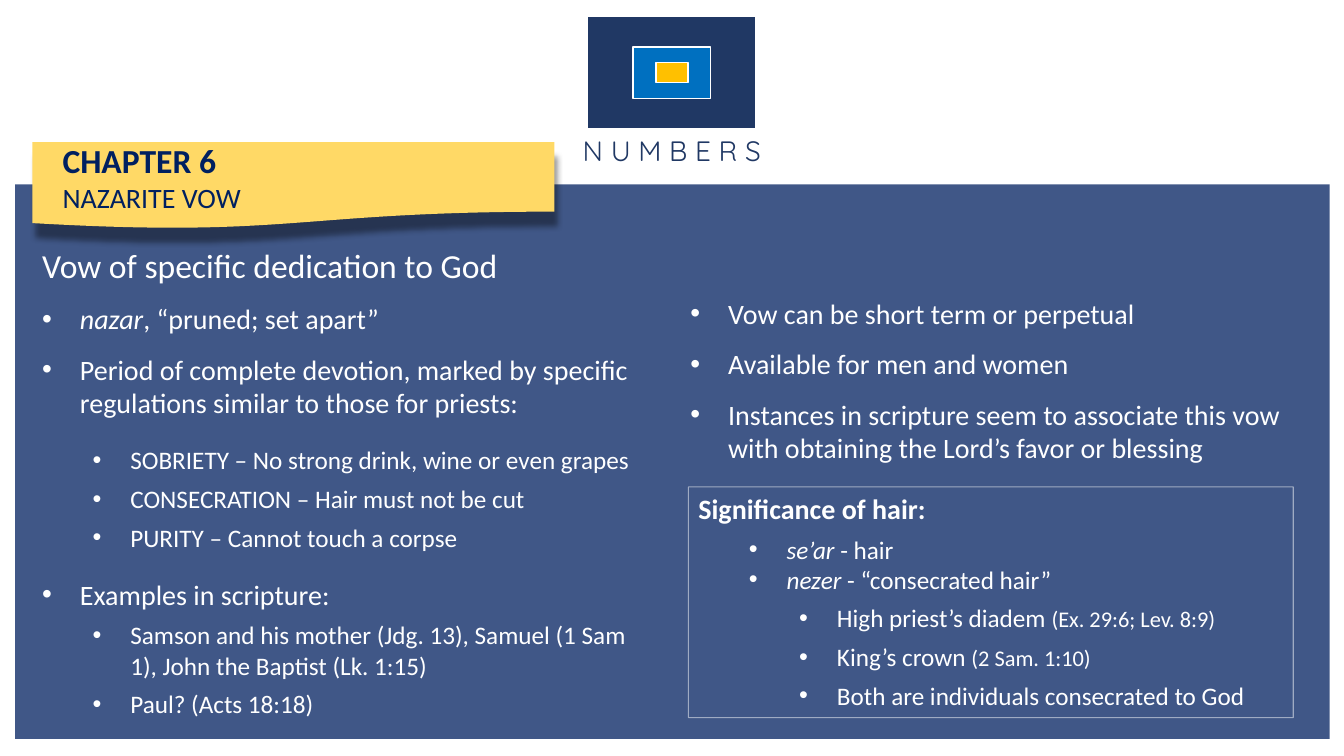
from dataclasses import dataclass

from lxml import etree
from pptx import Presentation
from pptx.dml.color import RGBColor
from pptx.enum.shapes import MSO_SHAPE
from pptx.enum.text import MSO_ANCHOR, PP_ALIGN
from pptx.oxml.ns import qn
from pptx.util import Inches, Pt

RECTANGLE = MSO_SHAPE.RECTANGLE
DOCUMENT = MSO_SHAPE.FLOWCHART_DOCUMENT
TOP, MIDDLE = MSO_ANCHOR.TOP, MSO_ANCHOR.MIDDLE
LEFT, CENTER = PP_ALIGN.LEFT, PP_ALIGN.CENTER

WIDTH, HEIGHT = Inches(13.333), Inches(7.5)
WHITE, NAVY, INK = "FFFFFF", "203864", "002060"
BLUE, GOLD, YELLOW, BLACK = "0070C0", "FFC000", "FFD966", "000000"
HANGING, LEVEL_STEP = 2.81, 3.75  # columns


@dataclass(frozen=True)
class Area:
    """Left, top, width and height on a grid of 100 columns by 100 rows."""
    column: float
    row: float
    columns: float
    rows: float

    def lengths(self) -> tuple[int, int, int, int]:
        return (across(self.column), down(self.row),
                across(self.columns), down(self.rows))


@dataclass(frozen=True)
class Span:
    text: str
    size: float | None = None
    italic: bool = False


@dataclass(frozen=True)
class Line:
    spans: tuple[Span, ...]
    size: float = 20
    bold: bool = False
    level: int | None = None  # None means no bullet
    before: float = 0
    after: float = 0


def across(columns: float) -> int:
    return round(WIDTH * columns / 100)


def down(rows: float) -> int:
    return round(HEIGHT * rows / 100)


def rgb(color: str) -> RGBColor:
    return RGBColor.from_string(color)


def plain(text: str, **options) -> Line:
    return Line((Span(text),), **options)


def add_alpha(color_element, percent: float) -> None:
    etree.SubElement(color_element, qn("a:alpha"), val=str(round(percent * 1000)))


def set_alpha(color_format_parent, percent: float) -> None:
    add_alpha(color_format_parent.find(".//" + qn("a:srgbClr")), percent)


def add_box(page, area: Area, kind=RECTANGLE, fill: str | None = None,
            fill_alpha: float = 100, line: str | None = None,
            line_width: float = 1, line_alpha: float = 100):
    box = page.shapes.add_shape(kind, *area.lengths())
    box.shadow.inherit = False
    properties = box.element.spPr
    if fill:
        box.fill.solid()
        box.fill.fore_color.rgb = rgb(fill)
        if fill_alpha < 100:
            set_alpha(properties.find(qn("a:solidFill")), fill_alpha)
    else:
        box.fill.background()
    if line:
        box.line.color.rgb = rgb(line)
        box.line.width = Pt(line_width)
        if line_alpha < 100:
            set_alpha(properties.find(qn("a:ln")), line_alpha)
    else:
        box.line.fill.background()
    return box


def add_shadow(box, color: str, alpha: float, blur: float, distance: float,
               angle: float) -> None:
    effects = box.element.spPr.find(qn("a:effectLst"))
    shadow = etree.SubElement(
        effects, qn("a:outerShdw"), blurRad=str(Pt(blur)), dist=str(Pt(distance)),
        dir=str(round(angle * 60000)), algn="t", rotWithShape="0")
    add_alpha(etree.SubElement(shadow, qn("a:srgbClr"), val=color), alpha)


def add_bullet(para, level: int) -> None:
    para.level = level
    properties = para._p.get_or_add_pPr()
    properties.set("marL", str(across(HANGING + level * LEVEL_STEP)))
    properties.set("indent", str(-across(HANGING)))
    etree.SubElement(properties, qn("a:buFont"), typeface="Arial")
    etree.SubElement(properties, qn("a:buChar"), char="•")


def write(box, lines: list[Line], color: str = WHITE, font: str = "Calibri",
          align=LEFT, anchor=TOP, wrap: bool = True) -> None:
    frame = box.text_frame
    frame.word_wrap = wrap
    frame.vertical_anchor = anchor
    for index, line in enumerate(lines):
        para = frame.add_paragraph() if index else frame.paragraphs[0]
        para.alignment = align
        para.space_before, para.space_after = Pt(line.before), Pt(line.after)
        if line.level is not None:
            add_bullet(para, line.level)
        for span in line.spans:
            run = para.add_run()
            run.text = span.text
            run.font.name = font
            run.font.size = Pt(span.size or line.size)
            run.font.bold = line.bold
            run.font.italic = span.italic
            run.font.color.rgb = rgb(color)


def add_text(page, area: Area, lines: list[Line], **options) -> None:
    write(page.shapes.add_textbox(*area.lengths()), lines, **options)


def add_emblem(page) -> None:
    """Concentric rectangles above the title of the book."""
    center_column, center_row = 50, 9.6
    for columns, rows, fill in ((12.53, 14.93, NAVY), (5.78, 6.8, BLUE),
                                (2.4, 2.67, GOLD)):
        area = Area(center_column - columns / 2, center_row - rows / 2, columns, rows)
        add_box(page, area, fill=fill, line=WHITE)
    add_text(page, Area(42.53, 17.07, 14.93, 5.87), [plain("N U M B E R S")],
             color=NAVY, font="Quicksand", align=CENTER, wrap=False)


def add_banner(page) -> None:
    banner = add_box(page, Area(2.4, 18.8, 38.85, 11.47), DOCUMENT, fill=YELLOW)
    add_shadow(banner, BLACK, alpha=40, blur=4, distance=10, angle=80)
    banner.text_frame.margin_left = across(2.25)
    write(banner, [plain("CHAPTER 6", size=24, bold=True), plain("NAZARITE VOW")],
          color=INK, anchor=MIDDLE)


VOW = [
    plain("Vow of specific dedication to God", size=24, before=6, after=12),
    Line((Span("nazar", italic=True), Span(", “pruned; set apart”")),
         level=0, after=12),
    plain("Period of complete devotion, marked by specific regulations "
          "similar to those for priests:", level=0, after=12),
    plain("SOBRIETY – No strong drink, wine or even grapes",
          size=18, level=1, before=6, after=6),
    plain("CONSECRATION – Hair must not be cut", size=18, level=1, after=6),
    plain("PURITY – Cannot touch a corpse", size=18, level=1, after=12),
    plain("Examples in scripture:", level=0, before=6),
    plain("Samson and his mother (Jdg. 13), Samuel (1 Sam 1), "
          "John the Baptist (Lk. 1:15)", size=18, level=1, before=6, after=6),
    plain("Paul? (Acts 18:18)", size=18, level=1, after=6),
]
TERMS = [plain(text, level=0, before=6, after=6) for text in (
    "Vow can be short term or perpetual",
    "Available for men and women",
    "Instances in scripture seem to associate this vow with obtaining "
    "the Lord’s favor or blessing")]
HAIR = [plain("Significance of hair:", bold=True, before=6, after=6)] + [
    Line((Span(word, italic=True), Span(meaning)), size=18, level=1)
    for word, meaning in (("se’ar", " - hair"), ("nezer", " - “consecrated hair”"))
] + [
    Line(spans, size=18, level=2, before=6) for spans in (
        (Span("High priest’s diadem "), Span("(Ex. 29:6; Lev. 8:9)", size=16)),
        (Span("King’s crown "), Span("(2 Sam. 1:10)", size=16)),
        (Span("Both are individuals consecrated to God"),))
]


def main() -> None:
    deck = Presentation()
    deck.slide_width, deck.slide_height = WIDTH, HEIGHT
    page = deck.slides.add_slide(deck.slide_layouts[6])
    add_emblem(page)
    add_box(page, Area(1.13, 24.4, 97.8, 73.33), fill=INK, fill_alpha=75)
    add_text(page, Area(2.4, 31.73, 46.43, 63.87), VOW)
    add_banner(page)
    add_text(page, Area(50.63, 38.53, 46.43, 25.87), TERMS)
    hair_box = add_box(page, Area(51.23, 64.4, 45, 30.53), line=WHITE,
                       line_width=0.75, line_alpha=50)
    write(hair_box, HAIR)
    deck.save("out.pptx")


if __name__ == "__main__":
    main()
